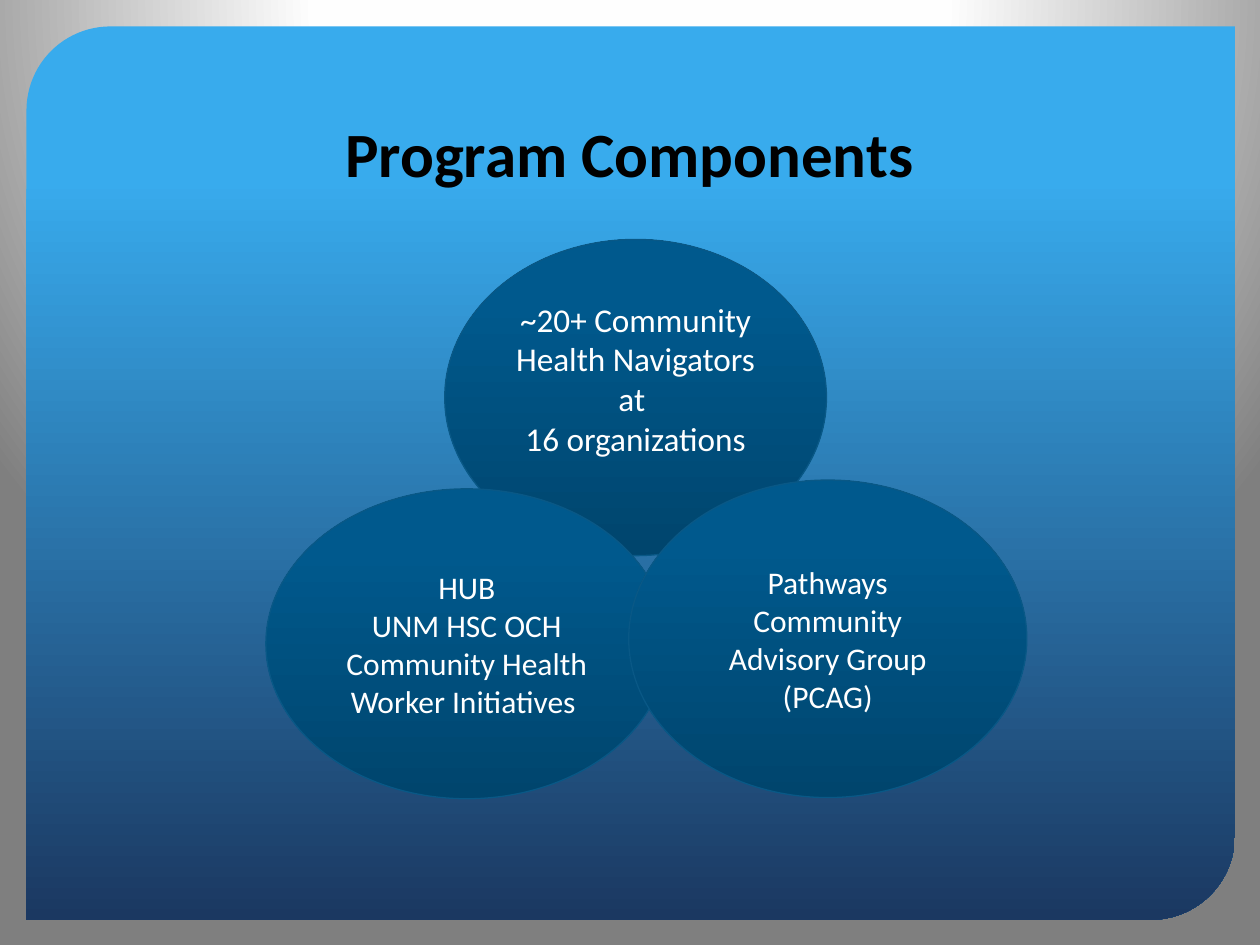
from pptx import Presentation
from pptx import util as u
from pptx.dml.color import RGBColor
from pptx.enum import shapes, text
from pptx.oxml import parse_xml
from pptx.oxml.ns import nsdecls, qn

BLACK = RGBColor(0x00, 0x00, 0x00)
WHITE = RGBColor(0xFF, 0xFF, 0xFF)
SOFT_WHITE = RGBColor(0xFE, 0xFE, 0xFE)
GREY = RGBColor(0x7F, 0x7F, 0x7F)
SKY = RGBColor(0x38, 0xAB, 0xED)
NAVY = RGBColor(0x1B, 0x38, 0x61)
DEEP_TEAL = RGBColor(0x00, 0x45, 0x6D)
TEAL = RGBColor(0x00, 0x59, 0x8D)
LIGHT_TEAL = RGBColor(0x00, 0x5A, 0x8E)
OUTLINE = RGBColor(0x09, 0x58, 0x86)

PANEL_STOPS = [(17, SKY), (100, NAVY)]
CIRCLE_STOPS = [(0, DEEP_TEAL), (80, TEAL), (100, LIGHT_TEAL)]
BACKGROUND_STOPS = [(0, WHITE), (40, SOFT_WHITE), (100, GREY)]
RADIAL = ('<a:path path="circle">'
          '<a:fillToRect l="50000" t="-80000" r="50000" b="180000"/></a:path>')


class SlideBuilder:
    font = "Calibri"

    def __init__(self, prs):
        self.slide = prs.slides.add_slide(prs.slide_layouts[6])

    def gradient(self, fill, element, stops, direction):
        fill.gradient()
        old = element.find(".//" + qn("a:gradFill"))
        gs = "".join(f'<a:gs pos="{pos * 1000}"><a:srgbClr val="{color}"/></a:gs>'
                     for pos, color in stops)
        new = parse_xml(f'<a:gradFill {nsdecls("a")} rotWithShape="1">'
                        f'<a:gsLst>{gs}</a:gsLst>{direction}</a:gradFill>')
        old.getparent().replace(old, new)

    def background(self, stops):
        self.gradient(self.slide.background.fill, self.slide.element, stops, RADIAL)

    def shape(self, kind, box, stops, angle):
        sp = self.slide.shapes.add_shape(kind, *map(u.Inches, box))
        sp.shadow.inherit = False
        self.gradient(sp.fill, sp.element, stops, f'<a:lin ang="{angle * 60000}" scaled="0"/>')
        return sp

    def panel(self, box):
        sp = self.shape(shapes.MSO_SHAPE.ROUND_2_DIAG_RECTANGLE, box, PANEL_STOPS, 90)
        sp.adjustments[0] = 0.094
        sp.adjustments[1] = 0
        sp.line.fill.background()

    def set_text(self, tf, lines, size, color, anchor, bold=False):
        tf.word_wrap = True
        tf.vertical_anchor = anchor
        for i, line in enumerate(lines):
            p = tf.add_paragraph() if i else tf.paragraphs[0]
            p.text = line
            p.alignment = text.PP_ALIGN.CENTER
            p.font.name = self.font
            p.font.size = u.Pt(size)
            p.font.bold = bold
            p.font.color.rgb = color

    def title(self, box, line):
        sp = self.slide.shapes.add_textbox(*map(u.Inches, box))
        self.set_text(sp.text_frame, [line], 36, BLACK, text.MSO_ANCHOR.BOTTOM, bold=True)

    def circle(self, box, lines, size=18, bottom=0.05):
        sp = self.shape(shapes.MSO_SHAPE.OVAL, box, CIRCLE_STOPS, 270)
        sp.line.color.rgb = OUTLINE
        sp.line.width = u.Pt(0.75)
        sp.text_frame.margin_bottom = u.Inches(bottom)
        self.set_text(sp.text_frame, lines, size, WHITE, text.MSO_ANCHOR.MIDDLE)


def main():
    prs = Presentation()
    prs.slide_width, prs.slide_height = u.Inches(10), u.Inches(7.5)
    s = SlideBuilder(prs)
    s.background(BACKGROUND_STOPS)
    s.panel((0.21, 0.21, 9.59, 7.09))
    s.title((0.85, 0.42, 8.29, 1.14), "Program Components")
    s.circle((3.53, 1.9, 3.03, 2.51),
             ["~20+ Community Health Navigators at ", "16 organizations"],
             size=19, bottom=0.35)
    s.circle((2.11, 3.88, 3.19, 2.46),
             ["HUB", "UNM HSC OCH", "Community Health Worker Initiatives "])
    s.circle((4.99, 3.81, 3.16, 2.52), ["Pathways Community Advisory Group (PCAG)"])
    prs.save("out.pptx")


if __name__ == "__main__":
    main()
